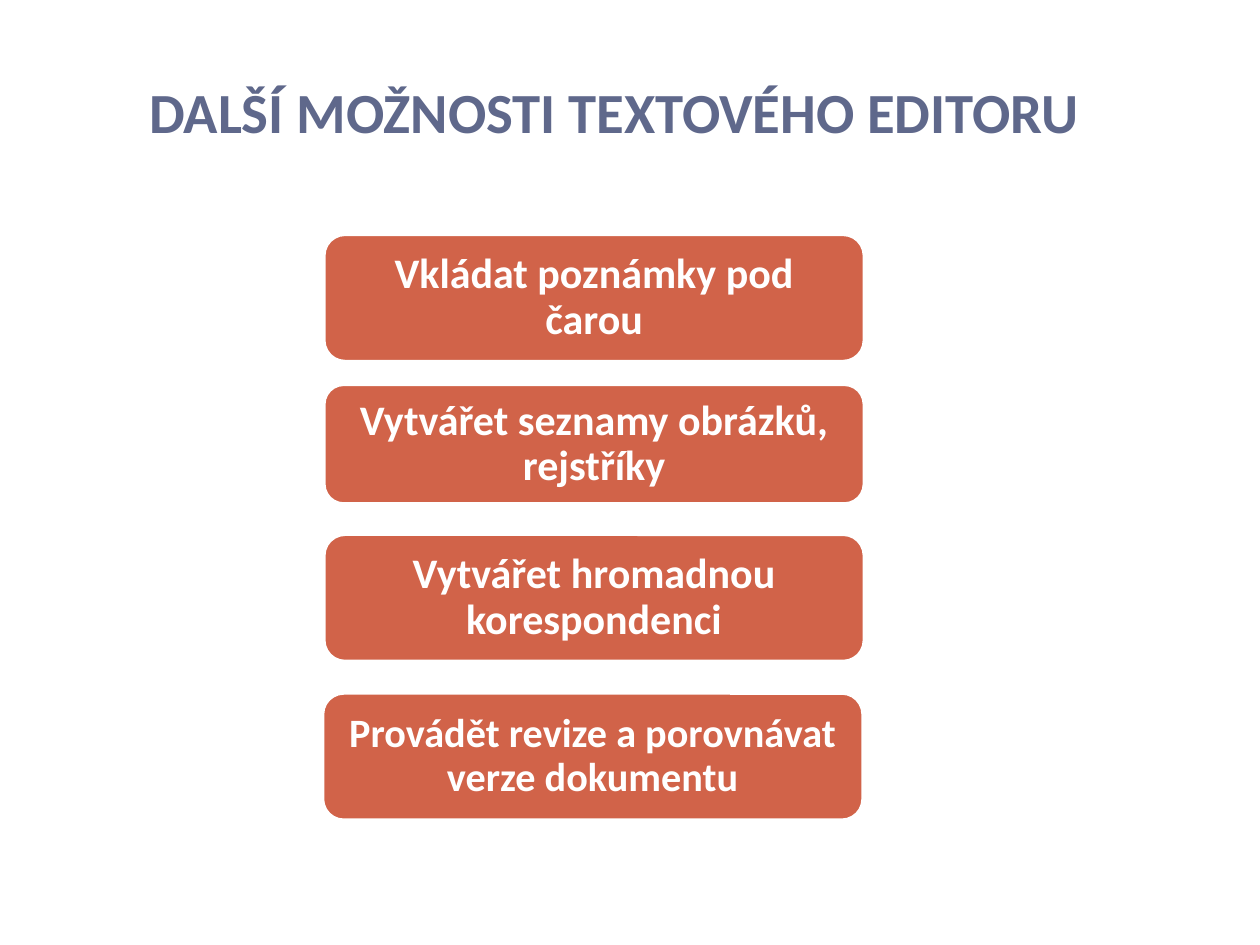
from pptx import Presentation
from pptx.dml.color import RGBColor
from pptx.enum.shapes import MSO_SHAPE
from pptx.enum.text import MSO_ANCHOR, MSO_AUTO_SIZE, PP_ALIGN
from pptx.util import Inches, Pt

COLORS = {"title": "5F688B", "option": "D16349", "white": "FFFFFF"}
TITLE_BOX = (0.24, 0.52, 9.37, 0.68)
OPTIONS_BOX = (2.57, 1.86, 4.29, 4.65)
ROW_PITCH, OPTION_HEIGHT = 1.19, 1.01

# Text, text size, and offsets from the regular row: left, top, height
OPTIONS = [
    ("Vkládat poznámky pod čarou", 24, 0, 0, 0),
    ("Vytvářet seznamy obrázků, rejstříky", 24, 0, 0, -0.06),
    ("Vytvářet hromadnou korespondenci", 24, 0, 0, 0),
    ("Provádět revize a porovnávat verze dokumentu", 23, -0.01, 0.07, 0),
]


def color(name):
    return RGBColor.from_string(COLORS[name])


def apply(target, formats):
    for attribute, value in formats.items():
        setattr(target, attribute, value)


def write(shape, text, size, text_color, frame_formats, paragraph_formats):
    frame = shape.text_frame
    apply(frame, {"word_wrap": True, "auto_size": MSO_AUTO_SIZE.NONE, **frame_formats})
    paragraph = frame.paragraphs[0]
    apply(paragraph, {"alignment": PP_ALIGN.CENTER, **paragraph_formats})
    run = paragraph.add_run()
    run.text = text
    apply(run.font, {"name": "Calibri", "size": Pt(size), "bold": True})
    run.font.color.rgb = color(text_color)


def add_heading(slide, box):
    heading = slide.shapes.title
    apply(heading, dict(zip(("left", "top", "width", "height"), map(Inches, box))))
    write(heading, "DALŠÍ MOŽNOSTI TEXTOVÉHO EDITORU ", 32.4, "title",
          {"vertical_anchor": MSO_ANCHOR.BOTTOM}, {})


def add_options(slide, box):
    left, top, width, _ = box
    # The rounded corners already inset the text a little
    insets = {"margin_left": Inches(0.09), "margin_right": Inches(0.09),
              "margin_top": Inches(0.05), "margin_bottom": Inches(0.05)}
    for row, (text, size, shift_x, shift_y, stretch) in enumerate(OPTIONS):
        option = slide.shapes.add_shape(
            MSO_SHAPE.ROUNDED_RECTANGLE,
            Inches(left + shift_x), Inches(top + row * ROW_PITCH + shift_y),
            Inches(width), Inches(OPTION_HEIGHT + stretch))
        option.shadow.inherit = False
        option.fill.solid()
        option.fill.fore_color.rgb = color("option")
        option.line.color.rgb = color("white")
        option.line.width = Pt(2)
        write(option, text, size, "white",
              {"vertical_anchor": MSO_ANCHOR.MIDDLE, **insets}, {"line_spacing": 0.9})


def main():
    presentation = Presentation()
    presentation.slide_width, presentation.slide_height = Inches(10), Inches(7.5)
    slide = presentation.slides.add_slide(presentation.slide_layouts[5])
    add_heading(slide, TITLE_BOX)
    add_options(slide, OPTIONS_BOX)
    presentation.save("out.pptx")


if __name__ == "__main__":
    main()
